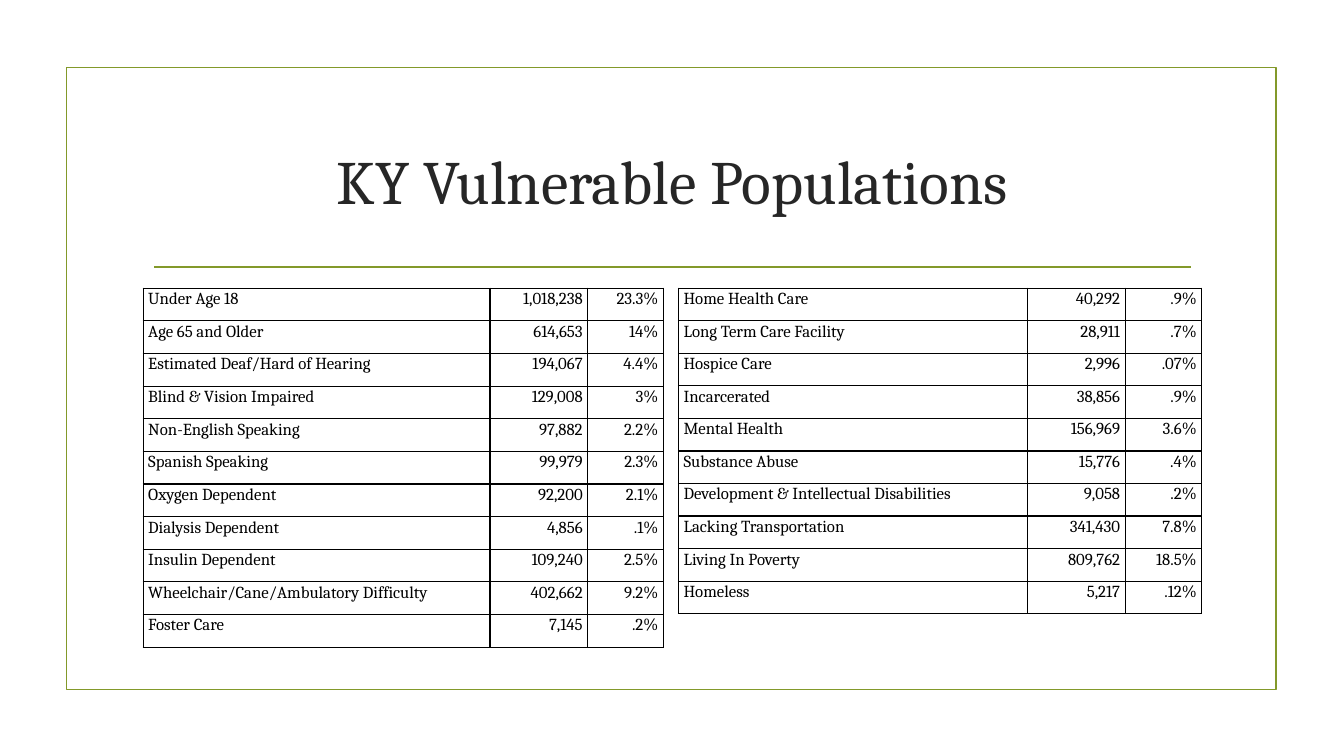
from lxml import etree
from pptx import Presentation
from pptx import util as u
from pptx.dml.color import RGBColor
from pptx.enum import shapes, text
from pptx.oxml import ns

COLORS = {"accent": "83992A", "title": "262626", "ink": "000000"}

AGE_AND_HEALTH = [
    ("Under Age 18", "1,018,238", "23.3%"),
    ("Age 65 and Older", "614,653", "14%"),
    ("Estimated Deaf/Hard of Hearing", "194,067", "4.4%"),
    ("Blind & Vision Impaired", "129,008", "3%"),
    ("Non-English Speaking", "97,882", "2.2%"),
    ("Spanish Speaking", "99,979", "2.3%"),
    ("Oxygen Dependent", "92,200", "2.1%"),
    ("Dialysis Dependent", "4,856", ".1%"),
    ("Insulin Dependent", "109,240", "2.5%"),
    ("Wheelchair/Cane/Ambulatory Difficulty", "402,662", "9.2%"),
    ("Foster Care", "7,145", ".2%"),
]
CARE_AND_SOCIAL = [
    ("Home Health Care", "40,292", ".9%"),
    ("Long Term Care Facility", "28,911", ".7%"),
    ("Hospice Care", "2,996", ".07%"),
    ("Incarcerated", "38,856", ".9%"),
    ("Mental Health", "156,969", "3.6%"),
    ("Substance Abuse", "15,776", ".4%"),
    ("Development & Intellectual Disabilities", "9,058", ".2%"),
    ("Lacking Transportation", "341,430", "7.8%"),
    ("Living In Poverty", "809,762", "18.5%"),
    ("Homeless", "5,217", ".12%"),
]


class SlideBuilder:
    """Holds the style and the current slide, and adds each kind of element."""

    font = "Cambria"
    line_width = u.Pt(1.25)

    def __init__(self, prs):
        self.slide = prs.slides.add_slide(prs.slide_layouts[5])

    def color(self, name):
        return RGBColor.from_string(COLORS[name])

    def style(self, p, size, color, align):
        p.alignment = align
        for r in p.runs:
            r.font.name = self.font
            r.font.size = u.Pt(size)
            r.font.color.rgb = self.color(color)

    def title(self, words, left, top, width, height):
        sp = self.slide.shapes.title
        sp.left, sp.top = u.Inches(left), u.Inches(top)
        sp.width, sp.height = u.Inches(width), u.Inches(height)
        tf = sp.text_frame
        tf.text = words
        tf.word_wrap = True
        tf.vertical_anchor = text.MSO_ANCHOR.MIDDLE
        self.style(tf.paragraphs[0], 44, "title", text.PP_ALIGN.CENTER)

    def frame(self, left, top, width, height):
        sp = self.slide.shapes.add_shape(
            shapes.MSO_SHAPE.RECTANGLE, u.Inches(left), u.Inches(top),
            u.Inches(width), u.Inches(height))
        sp.shadow.inherit = False
        sp.fill.background()
        sp.line.color.rgb = self.color("accent")
        sp.line.width = self.line_width

    def rule(self, left, right, y):
        line = self.slide.shapes.add_connector(
            shapes.MSO_CONNECTOR.STRAIGHT, u.Inches(left), u.Inches(y),
            u.Inches(right), u.Inches(y))
        line.line.color.rgb = self.color("accent")
        line.line.width = self.line_width
        etree.SubElement(line._element.spPr, ns.qn("a:effectLst"))

    def borders(self, cell):
        tcPr = cell._tc.get_or_add_tcPr()
        for i, side in enumerate(("lnL", "lnR", "lnT", "lnB")):
            ln = etree.Element(ns.qn("a:" + side), w=str(u.Pt(1)))
            fill = etree.SubElement(ln, ns.qn("a:solidFill"))
            etree.SubElement(fill, ns.qn("a:srgbClr"), val=COLORS["ink"])
            tcPr.insert(i, ln)

    def table(self, rows, left, top, height, widths):
        table = self.slide.shapes.add_table(
            len(rows), len(widths), u.Inches(left), u.Inches(top),
            u.Inches(sum(widths)), u.Inches(height)).table
        table.first_row = table.horz_banding = False
        for column, width in zip(table.columns, widths):
            column.width = u.Inches(width)
        for i, row in enumerate(rows):
            for j, value in enumerate(row):
                cell = table.cell(i, j)
                cell.margin_left = cell.margin_right = u.Inches(0.05)
                cell.margin_top = cell.margin_bottom = 0
                cell.fill.background()
                self.borders(cell)
                cell.text_frame.text = value
                p = cell.text_frame.paragraphs[0]
                p.line_spacing = 1.07
                align = text.PP_ALIGN.RIGHT if j else text.PP_ALIGN.LEFT
                self.style(p, 12, "ink", align)


def main():
    prs = Presentation()
    prs.slide_width, prs.slide_height = u.Inches(13.33), u.Inches(7.5)
    s = SlideBuilder(prs)
    s.frame(0.66, 0.67, 12, 6.17)
    s.rule(1.53, 11.81, 2.65)
    s.title("KY Vulnerable Populations", 1.42, 1.07, 10.5, 1.43)
    s.table(AGE_AND_HEALTH, 1.42, 2.86, 3.56, (3.44, 0.97, 0.75))
    s.table(CARE_AND_SOCIAL, 6.73, 2.86, 3.23, (3.46, 0.97, 0.76))
    prs.save("out.pptx")


if __name__ == "__main__":
    main()
